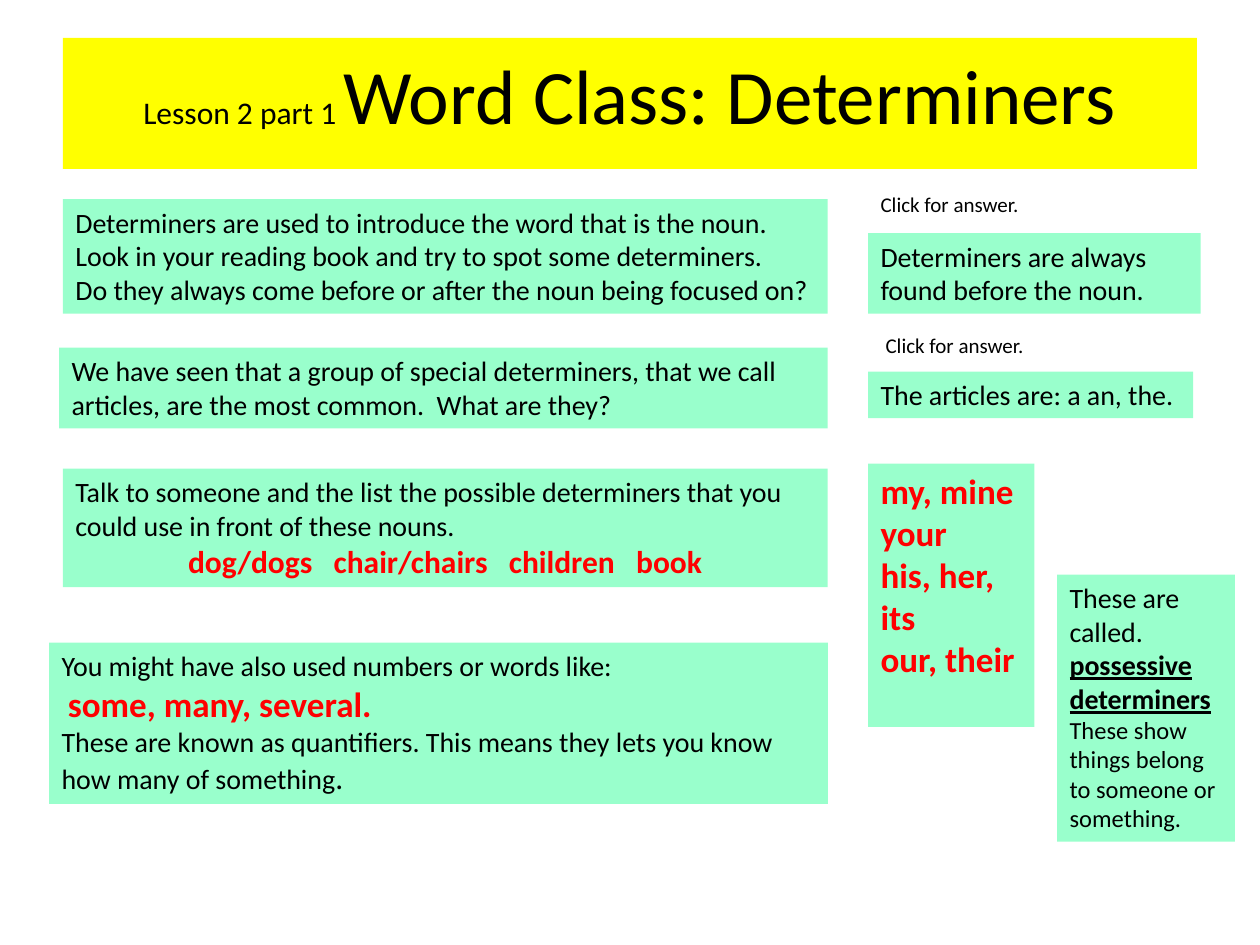
"""Build a lesson slide about determiners."""
from typing import NamedTuple, Optional

from pptx import Presentation
from pptx.dml.color import RGBColor
from pptx.enum.shapes import MSO_SHAPE as Shape
from pptx.enum.text import MSO_ANCHOR as Anchor, PP_ALIGN as Align
from pptx.util import Inches, Pt

BLACK = RGBColor(0x00, 0x00, 0x00)
RED = RGBColor(0xFF, 0x00, 0x00)
YELLOW = RGBColor(0xFF, 0xFF, 0x00)
MINT = RGBColor(0x99, 0xFF, 0xCC)
FONT = "Calibri"


class Span(NamedTuple):
    text: str
    size: int = 16
    color: RGBColor = BLACK
    bold: bool = False
    underline: bool = False


class Line(NamedTuple):
    spans: list[Span]
    align: Align = Align.LEFT


class Box(NamedTuple):
    left: float
    top: float
    width: float
    height: float
    lines: list[Line]
    fill: Optional[RGBColor] = MINT
    inset_top: float = 0.05


def line(text: str, size: int = 16, color: RGBColor = BLACK, bold: bool = False,
         underline: bool = False, align: Align = Align.LEFT) -> Line:
    return Line([Span(text, size, color, bold, underline)], align)


def prompt(left: float, top: float) -> Box:
    return Box(left, top, 1.32, 0.3, [line("Click for answer.", 12)], None)


TITLE = Box(0.5, 0.3, 9, 1.04, [
    Line([Span("Lesson 2 part 1 ", 18), Span("Word Class: Determiners", 44)], Align.CENTER),
], YELLOW, 0.08)

QUESTIONS = [
    Box(0.5, 1.58, 6.07, 0.91, [
        line("Determiners are used to introduce the word that is the noun."),
        line("Look in your reading book and try to spot some determiners."),
        line("Do they always come before or after the noun being focused on?"),
    ]),
    Box(0.47, 2.76, 6.1, 0.64, [
        line("We have seen that a group of special determiners, that we call "
             "articles, are the most common.  What are they?"),
    ]),
    Box(0.5, 3.72, 6.07, 0.94, [
        line("Talk to someone and the list the possible determiners that you "
             "could use in front of these nouns."),
        line("dog/dogs   chair/chairs   children   book", 18, RED, True, align=Align.CENTER),
    ]),
    Box(0.39, 5.1, 6.18, 1.28, [
        line("You might have also used numbers or words like:"),
        Line([Span(" "), Span("some, many, several.", 20, RED, True)]),
        Line([Span("These are known as quantifiers. This means they lets you know "
                   "how many of something"), Span(".", 18)]),
    ]),
]

ANSWERS = [
    prompt(6.89, 1.47),
    Box(6.89, 1.85, 2.64, 0.64, [line("Determiners are always found before the noun.")]),
    prompt(6.93, 2.59),
    Box(6.89, 2.95, 2.58, 0.37, [line("The articles are: a an, the.")]),
    Box(6.89, 3.68, 1.32, 2.09, [
        line(words, 20, RED, True)
        for words in ("my, mine", "your", "his, her, its", "our, their")
    ]),
    Box(8.39, 4.56, 1.41, 2.12, [
        Line([Span("These are called. "), Span("possessive", bold=True, underline=True)]),
        line("determiners", bold=True, underline=True),
        line("These show things belong to someone or something.", 14),
    ]),
]


def draw_box(slide, box: Box) -> None:
    bounds = [Inches(value) for value in box[:4]]
    if box.fill is None:
        shape = slide.shapes.add_textbox(*bounds)
    else:
        shape = slide.shapes.add_shape(Shape.RECTANGLE, *bounds)
        shape.shadow.inherit = False
        shape.fill.solid()
        shape.fill.fore_color.rgb = box.fill
        shape.line.fill.background()
    frame = shape.text_frame
    frame.word_wrap = box.fill is not None
    frame.vertical_anchor = Anchor.TOP
    frame.margin_top = Inches(box.inset_top)
    for index, row in enumerate(box.lines):
        paragraph = frame.add_paragraph() if index else frame.paragraphs[0]
        paragraph.alignment = row.align
        for span in row.spans:
            run = paragraph.add_run()
            run.text = span.text
            run.font.name = FONT
            run.font.size = Pt(span.size)
            run.font.color.rgb = span.color
            run.font.bold = span.bold
            run.font.underline = span.underline


def main() -> None:
    presentation = Presentation()
    presentation.slide_width = Inches(10)
    presentation.slide_height = Inches(7.5)
    slide = presentation.slides.add_slide(presentation.slide_layouts[6])
    for box in [TITLE, *QUESTIONS, *ANSWERS]:
        draw_box(slide, box)
    presentation.save("out.pptx")


if __name__ == "__main__":
    main()
